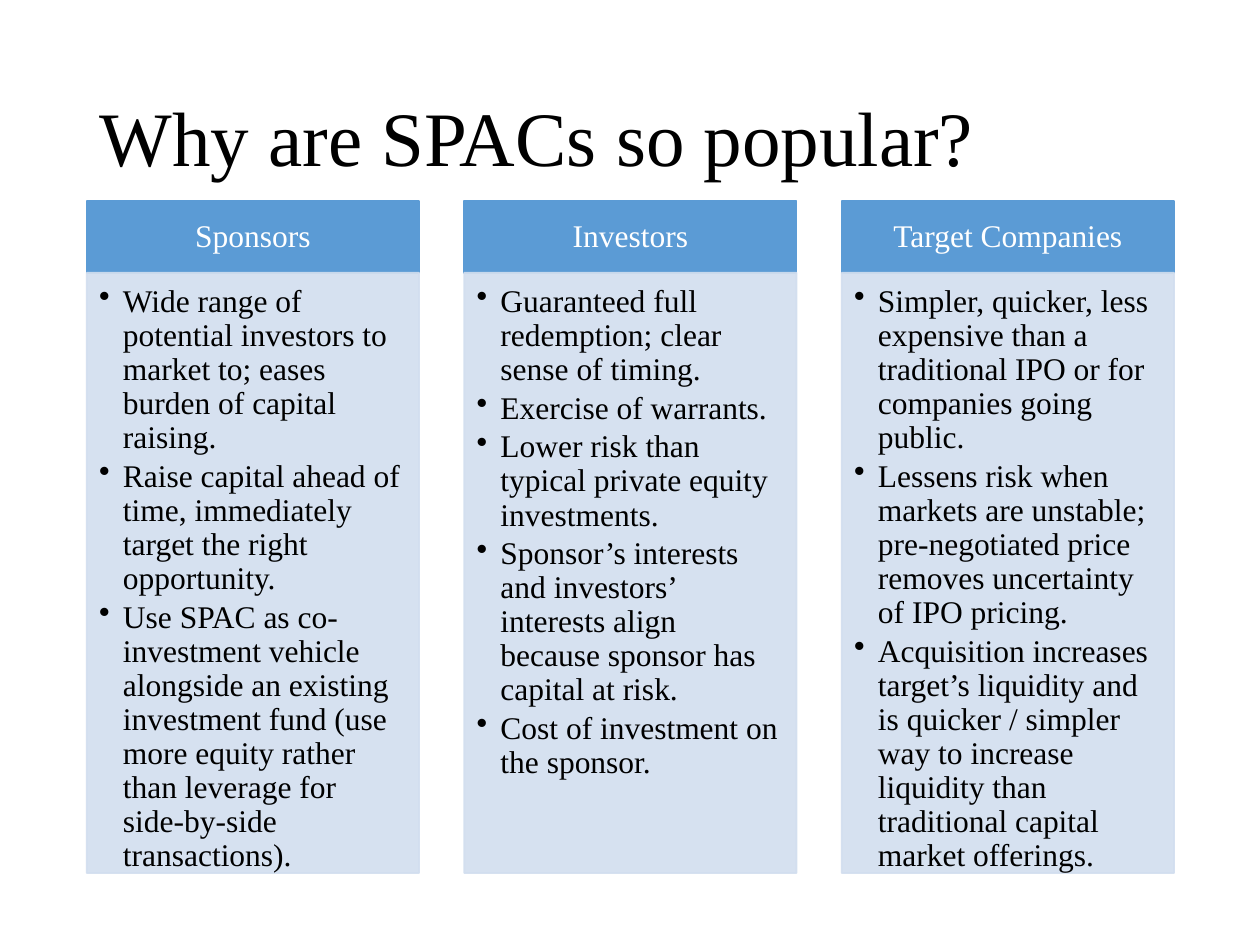
import pptx
import pptx.dml.color
import pptx.enum.shapes
import pptx.enum.text
import pptx.oxml.ns
import pptx.util
import lxml.etree

Cm = pptx.util.Cm
Pt = pptx.util.Pt
ALIGN = pptx.enum.text.PP_ALIGN
ANCHOR = pptx.enum.text.MSO_ANCHOR


def colour(hex_value):
    return pptx.dml.color.RGBColor.from_string(hex_value)


def add_box(slide, left, top, width, height, fill, paragraphs, text_colour):
    box = slide.shapes.add_shape(pptx.enum.shapes.MSO_SHAPE.RECTANGLE, left, top, width, height)
    box.shadow.inherit = False
    box.fill.solid()
    box.fill.fore_color.rgb = colour(fill)
    box.line.color.rgb = colour(fill)
    box.line.width = Pt(1)
    box.text_frame.text = "\n".join(paragraphs)
    for paragraph in box.text_frame.paragraphs:
        paragraph.line_spacing = 0.9
        paragraph.font.name = "Times New Roman"
        paragraph.font.size = Pt(18)
        paragraph.font.color.rgb = colour(text_colour)
    return box


columns = [
    ("Sponsors", [
        "Wide range of potential investors to market to; eases burden of capital raising.",
        "Raise capital ahead of time, immediately target the right opportunity.",
        "Use SPAC as co-investment vehicle alongside an existing investment fund (use more equity rather than leverage for side-by-side transactions).",
    ]),
    ("Investors", [
        "Guaranteed full redemption; clear sense of timing.",
        "Exercise of warrants.",
        "Lower risk than typical private equity investments.",
        "Sponsor’s interests and investors’ interests align because sponsor has capital at risk.",
        "Cost of investment on the sponsor.",
    ]),
    ("Target Companies", [
        "Simpler, quicker, less expensive than a traditional IPO or for companies going public.",
        "Lessens risk when markets are unstable; pre-negotiated price removes uncertainty of IPO pricing.",
        "Acquisition increases target’s liquidity and is quicker / simpler way to increase liquidity than traditional capital market offerings.",
    ]),
]

presentation = pptx.Presentation()
presentation.slide_width = Cm(25.4)
presentation.slide_height = Cm(19.05)
slide = presentation.slides.add_slide(presentation.slide_layouts[5])

title = slide.shapes.title
title.left, title.top, title.width, title.height = Cm(1.75), Cm(1.01), Cm(21.9), Cm(3.68)
title.text_frame.text = "Why are SPACs so popular?"
title.text_frame.vertical_anchor = ANCHOR.MIDDLE
heading = title.text_frame.paragraphs[0]
heading.alignment = ALIGN.LEFT
heading.line_spacing = 0.9
heading.font.name = "Times New Roman"
heading.font.size = Pt(44)
heading.font.color.rgb = colour("000000")

column_width = Cm(6.7)
column_pitch = Cm(7.61)
header_top, header_height = Cm(4.06), Cm(1.44)
panel_height = Cm(12.1)

for index, (audience, reasons) in enumerate(columns):
    left = Cm(1.75) + index * column_pitch
    header = add_box(slide, left, header_top, column_width, header_height,
                     "5B9BD5", [audience], "FFFFFF")
    header.text_frame.vertical_anchor = ANCHOR.MIDDLE
    header.text_frame.margin_left = header.text_frame.margin_right = Cm(0.36)
    header.text_frame.margin_top = header.text_frame.margin_bottom = Cm(0.2)
    header.text_frame.paragraphs[0].alignment = ALIGN.CENTER

    panel = add_box(slide, left, header_top + header_height, column_width, panel_height,
                    "D2DEEF", reasons, "000000")
    for panel_colour in panel._element.spPr.iter(pptx.oxml.ns.qn("a:srgbClr")):
        lxml.etree.SubElement(panel_colour, pptx.oxml.ns.qn("a:alpha"), val="90000")
    panel.text_frame.vertical_anchor = ANCHOR.TOP
    panel.text_frame.margin_left = panel.text_frame.margin_top = Cm(0.25)
    panel.text_frame.margin_right = Cm(0.36)
    panel.text_frame.margin_bottom = Cm(0.41)
    for reason in panel.text_frame.paragraphs:
        reason.alignment = ALIGN.LEFT
        reason.space_after = Pt(2.7)
        properties = reason._p.get_or_add_pPr()
        properties.set("marL", str(Cm(0.48)))
        properties.set("indent", str(-Cm(0.48)))
        bullet = lxml.etree.Element(pptx.oxml.ns.qn("a:buChar"), char="•")
        properties.find(pptx.oxml.ns.qn("a:defRPr")).addprevious(bullet)

presentation.save("out.pptx")
